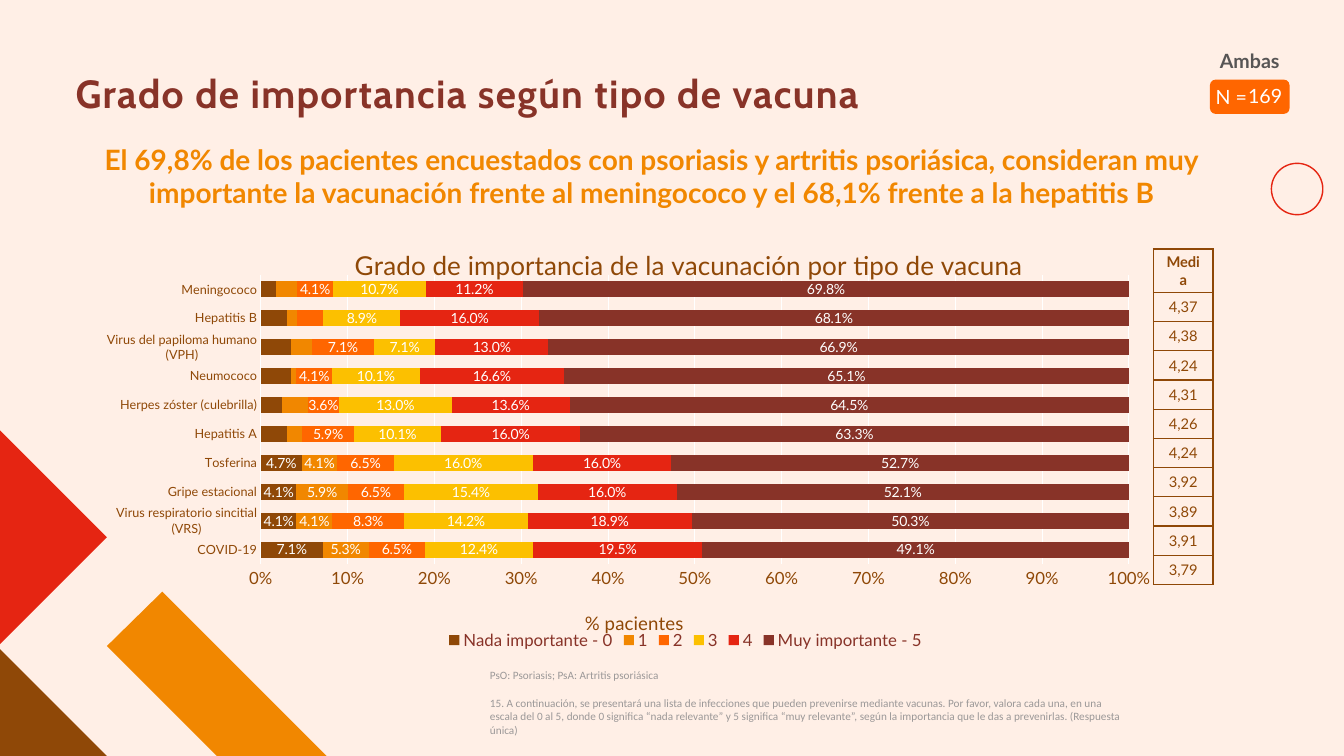
from lxml import etree
from pptx import Presentation
from pptx.chart.data import CategoryChartData
from pptx.dml.color import RGBColor
from pptx.enum.chart import XL_CHART_TYPE as ChartType, XL_LABEL_POSITION as LabelPos
from pptx.enum.chart import XL_LEGEND_POSITION as LegendPos, XL_TICK_MARK as Tick
from pptx.enum.shapes import MSO_SHAPE as Preset
from pptx.enum.text import MSO_ANCHOR as Anchor, MSO_AUTO_SIZE as AutoSize, PP_ALIGN as Align
from pptx.oxml import parse_xml
from pptx.oxml.ns import nsdecls, qn
from pptx.util import Inches, Pt

HEX = {
    "background": "FFEFE6", "brown": "8F4807", "orange": "F18700",
    "bright": "FF6600", "yellow": "FCC000", "red": "E52512",
    "maroon": "883328", "white": "FFFFFF", "gray": "575555", "note": "9B9898",
}
COLORS = {name: RGBColor.from_string(value) for name, value in HEX.items()}


def write(frame, lines, size, color, font="Lato", bold=False, align=Align.LEFT,
          margins=(0, 0, 0, 0)):
    """Fill a text frame, one paragraph per line, centred vertically."""
    frame.word_wrap = True
    frame.auto_size = AutoSize.NONE
    frame.vertical_anchor = Anchor.MIDDLE
    (frame.margin_left, frame.margin_top,
     frame.margin_right, frame.margin_bottom) = map(Inches, margins)
    frame.text = "\n".join(lines)
    for paragraph in frame.paragraphs:
        paragraph.alignment = align
        paragraph.font.name = font
        paragraph.font.size = Pt(size)
        paragraph.font.bold = bold
        paragraph.font.color.rgb = COLORS[color]


def set_layout(part, **shares):
    """Place a chart part by shares (x, y, w, h) of the chart's size."""
    for old in part.findall(qn("c:layout")):
        part.remove(old)
    target = '<c:layoutTarget val="inner"/>' if "w" in shares else ""
    modes = "".join(f'<c:{key}Mode val="edge"/>' for key in shares if key in "xy")
    values = "".join(f'<c:{key} val="{share}"/>' for key, share in shares.items())
    layout = parse_xml(f'<c:layout {nsdecls("c")}><c:manualLayout>{target}{modes}{values}'
                       '</c:manualLayout></c:layout>')
    part.insert(0 if part.find(qn("c:tx")) is None else 1, layout)


deck = Presentation()
deck.slide_width, deck.slide_height = Inches(13.33), Inches(7.5)
slide = deck.slides.add_slide(deck.slide_layouts[1])
slide.background.fill.solid()
slide.background.fill.fore_color.rgb = COLORS["background"]
shapes = slide.shapes

# Corner decoration, in hundredths of an inch
corner_pieces = [
    ("orange", [(324, 750), (215, 750), (106, 641), (161, 587)]),
    ("brown", [(106, 750), (0, 750), (0, 644)]),
    ("red", [(0, 427), (106, 533), (0, 639)]),
]
for color, points in corner_pieces:
    outline = shapes.build_freeform(*points[0], scale=Inches(0.01))
    outline.add_line_segments(points[1:], close=True)
    piece = outline.convert_to_shape()
    piece.shadow.inherit = False
    piece.fill.solid()
    piece.fill.fore_color.rgb = COLORS[color]
    piece.line.fill.background()

ring = shapes.add_shape(Preset.OVAL, *map(Inches, (12.61, 1.62, 0.51, 0.51)))
ring.shadow.inherit = False
ring.fill.background()
ring.line.color.rgb = COLORS["red"]
ring.line.width = Pt(1)

# Title and headline
title = shapes.title
title.left, title.top, title.width, title.height = map(Inches, (0.65, 0.6, 11.14, 0.72))
write(title.text_frame, ["Grado de importancia según tipo de vacuna"], 28, "maroon",
      font="Cabin", bold=True, margins=(0.1, 0.05, 0.1, 0.05))
title_line = title.text_frame.paragraphs[0]
title_line.line_spacing = 0.8
title_line.runs[0].font._element.set("spc", "100")

headline = slide.placeholders[1]
headline.left, headline.top, headline.width, headline.height = map(
    Inches, (0.65, 1.37, 11.63, 0.75))
write(headline.text_frame, [
    "El 69,8% de los pacientes encuestados con psoriasis y artritis psoriásica, "
    "consideran muy importante la vacunación frente al meningococo y el 68,1% "
    "frente a la hepatitis B"], 20, "orange", bold=True, align=Align.CENTER)
headline_line = headline.text_frame.paragraphs[0]
headline_line.space_before = Pt(6)
headline_props = headline_line._p.get_or_add_pPr()
headline_props.set("marL", "0")
headline_props.set("indent", "0")
etree.SubElement(headline_props, qn("a:buNone"))
# paragraph defaults come after the bullet setting
headline_props.append(headline_props.find(qn("a:defRPr")))

# Sample size
badge = shapes.add_shape(Preset.ROUNDED_RECTANGLE, *map(Inches, (12, 0.79, 0.79, 0.34)))
badge.shadow.inherit = False
badge.fill.solid()
badge.fill.fore_color.rgb = COLORS["bright"]
badge.line.fill.background()
write(badge.text_frame, ["N ="], 14, "white", margins=(0.04, 0.05, 0.1, 0.05))

group_label = shapes.add_textbox(*map(Inches, (12, 0.43, 0.79, 0.34)))
write(group_label.text_frame, ["Ambas"], 14, "gray", bold=True, align=Align.CENTER)

sample_size = shapes.add_textbox(*map(Inches, (12.28, 0.8, 0.61, 0.32)))
write(sample_size.text_frame, ["169"], 14, "white", margins=(0.1, 0.05, 0.1, 0.05))
sample_size.text_frame.paragraphs[0].line_spacing = 0.9

# Importance chart: percentages per vaccine, from the bottom bar up
vaccines = ["COVID-19", "Virus respiratorio sincitial (VRS)", "Gripe estacional", "Tosferina",
            "Hepatitis A", "Herpes zóster (culebrilla)", "Neumococo",
            "Virus del papiloma humano (VPH)", "Hepatitis B", "Meningococo"]
ratings = [
    ("Nada importante - 0", "brown", [7.1, 4.1, 4.1, 4.7, 3, 2.4, 3.5, 3.5, 3, 1.8]),
    ("1", "orange", [5.3, 4.1, 5.9, 4.1, 1.8, 3, 0.6, 2.4, 1.2, 2.4]),
    ("2", "bright", [6.5, 8.3, 6.5, 6.5, 5.9, 3.6, 4.1, 7.1, 3, 4.1]),
    ("3", "yellow", [12.4, 14.2, 15.4, 16, 10.1, 13, 10.1, 7.1, 8.9, 10.7]),
    ("4", "red", [19.5, 18.9, 16, 16, 16, 13.6, 16.6, 13, 16, 11.2]),
    ("Muy importante - 5", "maroon",
     [49.1, 50.3, 52.1, 52.7, 63.3, 64.5, 65.1, 66.9, 68.1, 69.8]),
]
SMALLEST_LABELLED = 3.6
data = CategoryChartData(number_format="0.0%")
data.categories = vaccines
for rating, _, percents in ratings:
    data.add_series(rating, [round(percent / 100, 3) for percent in percents])
chart = shapes.add_chart(ChartType.BAR_STACKED_100,
                         *map(Inches, (1.06, 2.18, 11.48, 4.31)), data).chart
chart.font.name = "Lato"
chart.font.size = Pt(10)
chart.font.color.rgb = COLORS["white"]
plot = chart.plots[0]
plot.gap_width, plot.overlap, plot.vary_by_categories = 80, 100, False

for series, (_, color, percents) in zip(plot.series, ratings):
    series.format.fill.solid()
    series.format.fill.fore_color.rgb = COLORS[color]
    labels = series.data_labels
    labels.show_value = True
    labels.position = LabelPos.CENTER
    labels.number_format = "0.0%"
    labels.number_format_is_linked = False
    labels.font.name = "Lato"
    labels.font.size = Pt(10)
    labels.font.color.rgb = COLORS["white"]
    unlabelled = [i for i, percent in enumerate(percents) if percent < SMALLEST_LABELLED]
    for place, index in enumerate(unlabelled):
        labels._element.insert(place, parse_xml(
            f'<c:dLbl {nsdecls("c")}><c:idx val="{index}"/><c:delete val="1"/></c:dLbl>'))

vaccine_axis, share_axis = chart.category_axis, chart.value_axis
for axis, size in ((vaccine_axis, 9), (share_axis, 12)):
    axis.major_tick_mark = axis.minor_tick_mark = Tick.NONE
    axis.tick_labels.font.name = "Lato"
    axis.tick_labels.font.size = Pt(size)
    axis.tick_labels.font.color.rgb = COLORS["brown"]
share_axis.format.line.fill.background()
share_axis.minimum_scale, share_axis.maximum_scale, share_axis.major_unit = 0, 1, 0.1
share_axis.tick_labels.number_format = "0%"
share_axis.tick_labels.number_format_is_linked = False
for line in (vaccine_axis.format.line, share_axis.major_gridlines.format.line):
    line.color.rgb = COLORS["white"]
    line.width = Pt(0.75)

for heading, text, size, x, y in (
        (chart.chart_title, "Grado de importancia de la vacunación por tipo de vacuna",
         18.6, 0.21, 0.05),
        (share_axis.axis_title, "% pacientes", 13.3, 0.41, 0.89)):
    heading.text_frame.text = text
    font = heading.text_frame.paragraphs[0].font
    font.name, font.size, font.bold = "Lato", Pt(size), False
    font.color.rgb = COLORS["brown"]
    set_layout(heading._element, x=x, y=y)
set_layout(chart._chartSpace.chart.plotArea, x=0.133, y=0.127, w=0.75, h=0.666)

chart.has_legend = True
chart.legend.position = LegendPos.BOTTOM
chart.legend.include_in_layout = False
chart.legend.font.name = "Lato"
chart.legend.font.size = Pt(12)
chart.legend.font.color.rgb = COLORS["maroon"]

# Mean score of each vaccine
means = ["Media", "4,37", "4,38", "4,24", "4,31", "4,26", "4,24", "3,92", "3,89", "3,91", "3,79"]
table = shapes.add_table(len(means), 1, *map(Inches, (11.44, 2.47, 0.59, 3.12))).table
table.first_row = table.horz_banding = False
for row, mean in enumerate(means):
    table.rows[row].height = Inches(0.29 if row else 0.26)
    cell = table.cell(row, 0)
    write(cell.text_frame, [mean], 10.5, "brown", bold=row == 0, align=Align.CENTER)
    cell.vertical_anchor = Anchor.MIDDLE
    cell.margin_left = cell.margin_right = Inches(0.1)
    cell.margin_top = cell.margin_bottom = Inches(0.04)
    cell_props = cell._tc.get_or_add_tcPr()
    for side in ("lnL", "lnR", "lnT", "lnB"):
        cell_props.append(parse_xml(
            f'<a:{side} {nsdecls("a")} w="{Pt(1)}"><a:solidFill>'
            f'<a:srgbClr val="{HEX["brown"]}"/></a:solidFill></a:{side}>'))
    cell.fill.background()

footnote = shapes.add_textbox(*map(Inches, (4.86, 6.8, 6.33, 0.34)))
write(footnote.text_frame, [
    "PsO: Psoriasis; PsA: Artritis psoriásica",
    "15. A continuación, se presentará una lista de infecciones que pueden prevenirse mediante "
    "vacunas. Por favor, valora cada una, en una escala del 0 al 5, donde 0 significa “nada "
    "relevante” y 5 significa “muy relevante”, según la importancia que le das a prevenirlas. "
    "(Respuesta única)"], 8, "note", font="Calibri")
footnote.text_frame.paragraphs[1].space_before = Pt(10)

deck.save("out.pptx")
